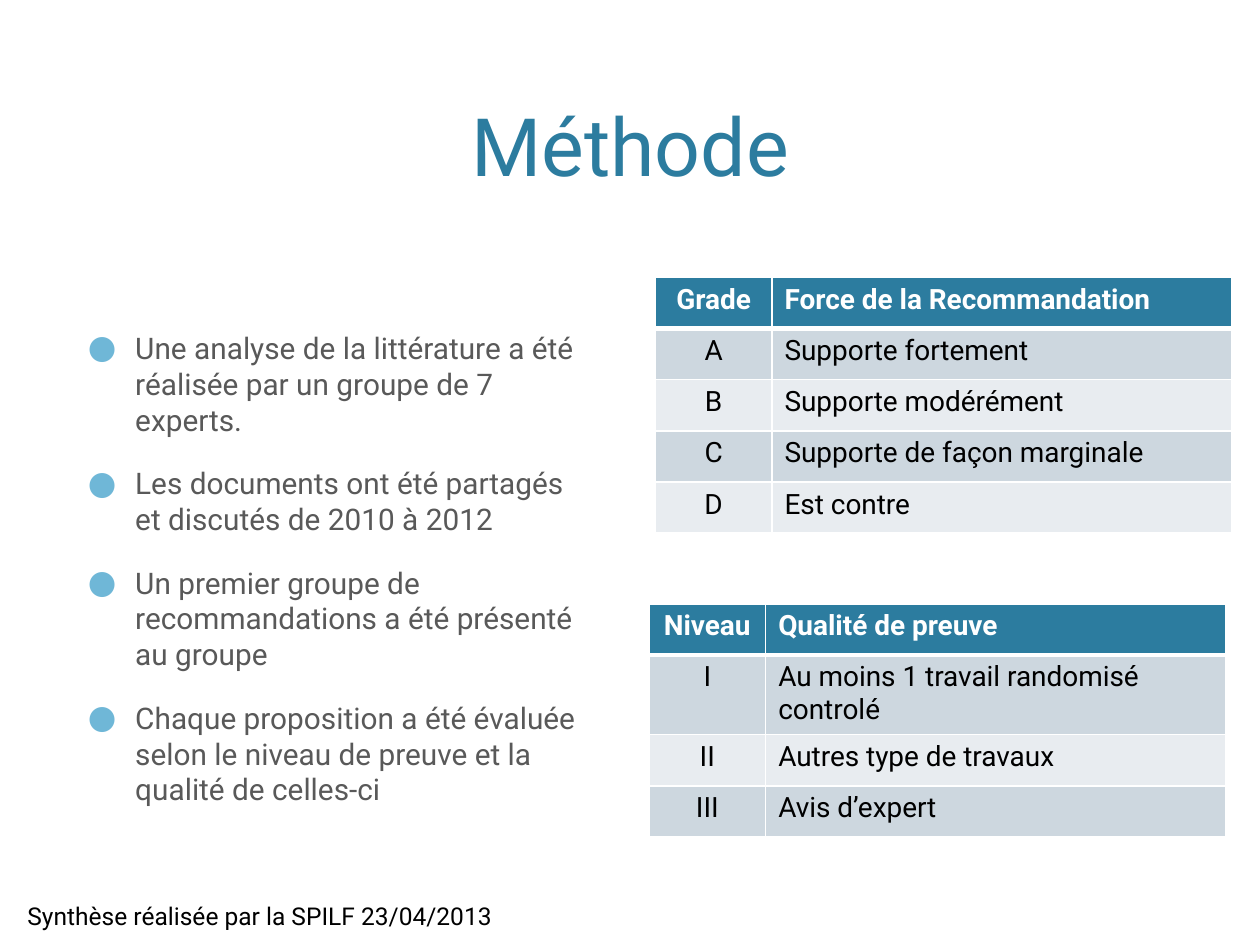
"""Build the "Méthode" slide: four bullet points beside two grading tables."""
from lxml import etree
from pptx import Presentation
from pptx.dml.color import RGBColor
from pptx.enum.text import MSO_ANCHOR, PP_ALIGN
from pptx.oxml.ns import qn
from pptx.util import Pt

LEFT, CENTER = PP_ALIGN.LEFT, PP_ALIGN.CENTER
TOP, BOTTOM = MSO_ANCHOR.TOP, MSO_ANCHOR.BOTTOM

FONT = "Roboto"
TEAL = RGBColor(0x2C, 0x7C, 0x9F)
SKY = RGBColor(0x6F, 0xB7, 0xD7)
GREY = RGBColor(0x59, 0x59, 0x59)
BAND_DARK = RGBColor(0xCD, 0xD7, 0xDF)
BAND_LIGHT = RGBColor(0xE8, 0xEC, 0xF0)
WHITE = RGBColor(0xFF, 0xFF, 0xFF)
BLACK = RGBColor(0, 0, 0)

TITLE = "Méthode"
POINTS = [
    "Une analyse de la littérature a été réalisée par un groupe de 7 experts.",
    "Les documents ont été partagés et discutés de 2010 à 2012",
    "Un premier groupe de recommandations a été présenté au groupe",
    "Chaque proposition a été évaluée selon le niveau de preuve et la qualité de celles-ci",
]
GRADES = [
    ("Grade", "Force de la Recommandation"),
    ("A", "Supporte fortement"),
    ("B", "Supporte modérément"),
    ("C", "Supporte de façon marginale"),
    ("D", "Est contre"),
]
LEVELS = [
    ("Niveau", "Qualité de preuve"),
    ("I", "Au moins 1 travail randomisé controlé"),
    ("II", "Autres type de travaux"),
    ("III", "Avis d’expert"),
]
SOURCE = "Synthèse réalisée par la SPILF 23/04/2013"

COLUMN_WIDTHS = (66.75, 263)
ROW_HEIGHT = 29.2
INDENT = 27


def add_bullet(para):
    """Give a paragraph a hanging round bullet."""
    properties = para._p.get_or_add_pPr()
    properties.set("marL", str(Pt(INDENT)))
    properties.set("indent", str(-Pt(INDENT)))
    color = etree.SubElement(properties, qn("a:buClr"))
    etree.SubElement(color, qn("a:srgbClr"), val=str(SKY))
    etree.SubElement(properties, qn("a:buSzPct"), val="110000")
    etree.SubElement(properties, qn("a:buFont"), typeface=FONT)
    etree.SubElement(properties, qn("a:buChar"), char="●")


def write(frame, *texts, size, color, bold=False, align=LEFT, anchor=TOP,
          bullets=False, gap=0):
    """Write one formatted paragraph per text into a text frame."""
    frame.vertical_anchor = anchor
    for index, text in enumerate(texts):
        para = frame.add_paragraph() if index else frame.paragraphs[0]
        para.alignment = align
        if index:
            para.space_before = Pt(gap)
        if bullets:
            add_bullet(para)
        span = para.add_run()
        span.text = text
        span.font.name = FONT
        span.font.size = Pt(size)
        span.font.bold = bold
        span.font.color.rgb = color


def add_text_box(page, left, top, width, height, wrap=True):
    """Add a text box and return its text frame."""
    box = page.shapes.add_textbox(Pt(left), Pt(top), Pt(width), Pt(height))
    box.text_frame.word_wrap = wrap
    return box.text_frame


def set_borders(cell, bottom):
    """Draw white cell borders, with the given bottom weight."""
    properties = cell._tc.get_or_add_tcPr()
    weights = {"a:lnL": 1, "a:lnR": 1, "a:lnT": 1, "a:lnB": bottom}
    for index, (side, weight) in enumerate(weights.items()):
        line = etree.Element(qn(side), w=str(Pt(weight)))
        fill = etree.SubElement(line, qn("a:solidFill"))
        etree.SubElement(fill, qn("a:srgbClr"), val=str(WHITE))
        properties.insert(index, line)


def add_scale(page, rows, left, top):
    """Add a two-column table with a header row and banded body."""
    table = page.shapes.add_table(
        len(rows), len(COLUMN_WIDTHS), Pt(left), Pt(top),
        Pt(sum(COLUMN_WIDTHS)), Pt(ROW_HEIGHT * len(rows))).table
    for column, width in zip(table.columns, COLUMN_WIDTHS):
        column.width = Pt(width)
    for row_index, row in enumerate(rows):
        table.rows[row_index].height = Pt(ROW_HEIGHT)
        header = row_index == 0
        band = BAND_DARK if row_index % 2 else BAND_LIGHT
        for column_index, text in enumerate(row):
            cell = table.cell(row_index, column_index)
            cell.fill.solid()
            cell.fill.fore_color.rgb = TEAL if header else band
            set_borders(cell, bottom=3 if header or row_index == 0 else 1)
            if row_index == 1:
                cell._tc.tcPr.find(qn("a:lnT")).set("w", str(Pt(3)))
            write(cell.text_frame, text, size=16, bold=header,
                  color=WHITE if header else BLACK,
                  align=LEFT if column_index else CENTER)


def main():
    """Lay out the slide and save the deck."""
    deck = Presentation()
    deck.slide_width, deck.slide_height = Pt(720), Pt(540)
    page = deck.slides.add_slide(deck.slide_layouts[5])

    title = page.shapes.title
    title.left, title.top, title.width, title.height = Pt(43.2), Pt(8.6), Pt(633.6), Pt(105.1)
    write(title.text_frame, TITLE, size=46, color=TEAL, align=CENTER, anchor=BOTTOM)

    write(add_text_box(page, 43.2, 185, 302.4, 283), *POINTS,
          size=17, color=GREY, bullets=True, gap=16)
    add_scale(page, GRADES, 374.4, 158.6)
    add_scale(page, LEVELS, 370.8, 345)
    write(add_text_box(page, 8.6, 511.2, 309, 24.5, wrap=False), SOURCE,
          size=14, color=BLACK)
    deck.save("out.pptx")


if __name__ == "__main__":
    main()
